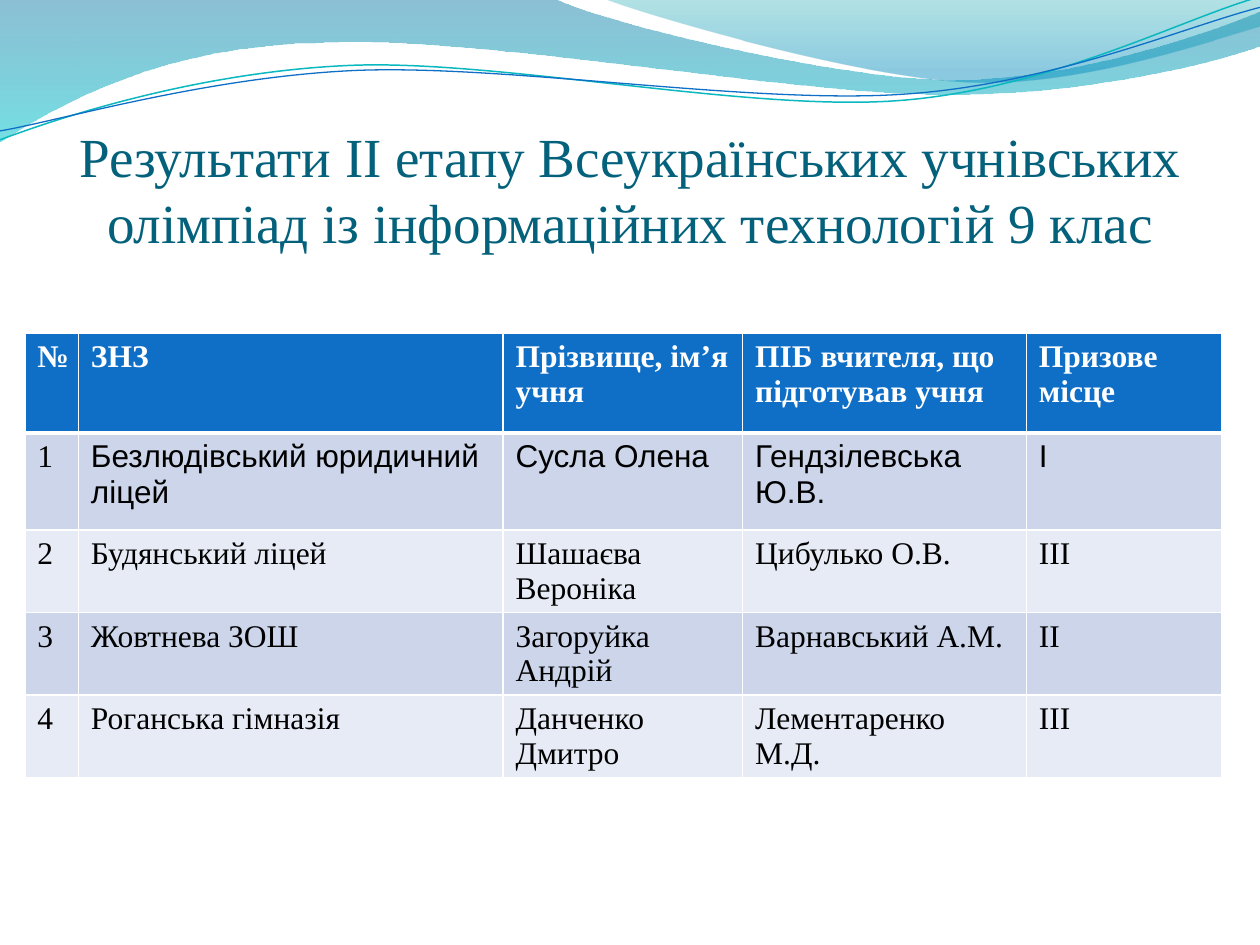
from dataclasses import dataclass

from lxml.etree import SubElement
from pptx import Presentation
from pptx.dml.color import RGBColor
from pptx.enum.text import MSO_ANCHOR, MSO_AUTO_SIZE, PP_ALIGN
from pptx.oxml import parse_xml
from pptx.oxml.ns import nsdecls, qn
from pptx.util import Cm, Pt


@dataclass(frozen=True)
class Theme:
    serif: str = "Times New Roman"
    sans: str = "Arial"
    title_size: float = 31.5
    table_size: float = 18
    title: str = "04617B"
    header: str = "0F6FC6"
    bands: tuple = ("CCD5EA", "E7EBF5")
    white: str = "FFFFFF"
    black: str = "000000"
    border: float = 1
    header_border: float = 3
    # Gradient stops: position, colour, opacity in percent
    band_wave: tuple = ((0, "0074A1", 45), (100, "00C6CF", 55))
    crest_wave: tuple = ((0, "00A1A9", 30), (80, "008BBF", 45))
    teal_line: tuple = ("0AB8BF", 0.85)
    blue_line: tuple = ("0F6FC6", 0.75)


@dataclass(frozen=True)
class Box:
    """A region of the slide in centimetres."""
    left: float
    top: float
    width: float
    height: float

    def lengths(self):
        return Cm(self.left), Cm(self.top), Cm(self.width), Cm(self.height)


THEME = Theme()
TITLE = "Результати ІІ етапу Всеукраїнських учнівських олімпіад із інформаційних технологій 9 клас"
HEADERS = ("№", "ЗНЗ", "Прізвище, ім’я учня", "ПІБ вчителя, що підготував учня", "Призове місце")
RESULTS = (
    ("1", "Безлюдівський юридичний ліцей", "Сусла Олена", "Гендзілевська Ю.В.", "І"),
    ("2", "Будянський ліцей", "Шашаєва Вероніка", "Цибулько О.В.", "ІІІ"),
    ("3", "Жовтнева ЗОШ", "Загоруйка Андрій", "Варнавський А.М.", "ІІ"),
    ("4", "Роганська гімназія", "Данченко Дмитро", "Лементаренко М.Д.", "ІІІ"),
)
COLUMN_WIDTHS = (1.08, 8.56, 4.83, 5.72, 3.94)
ROW_HEIGHTS = (2.01, 1.96, 1.07, 1.07, 1.07)

# Outlines in centimetres: two numbers are a straight step, six a Bézier curve.
BAND = (
    (0, -0.03), (11.18, -0.03),
    (12.09, 0.43, 16.87, 1.6, 19.25, 1.6), (21.67, 1.6, 24.33, 0.66, 25.4, 0.23),
    (25.43, 0.91), (24.97, 1.12, 22.1, 1.93, 18.95, 1.9),
    (15.8, 1.9, 9.7, 0.71, 6.53, 0.86), (3.28, 0.89, 1.17, 2.11, -0.03, 2.87),
)
CREST = (
    (12.17, -0.03), (12.93, 0.28, 17.32, 1.57, 19.53, 1.65),
    (21.74, 1.75, 24.41, 0.81, 25.4, 0.53), (25.4, 0),
)
TEAL_LINE = (
    (0, 2.82), (1.22, 2.36, 4.01, 1.45, 7.04, 1.32),
    (10.03, 1.19, 15.06, 2.26, 18.11, 2.03), (21.16, 1.8, 23.83, 0.38, 25.35, -0.05),
)
BLUE_LINE = (
    (0, 2.64), (1.19, 2.44, 4.17, 1.55, 7.19, 1.42),
    (10.24, 1.3, 15.16, 2.11, 18.21, 1.9), (21.23, 1.7, 23.9, 0.53, 25.4, 0.15),
)


def bend_segments(shape, outline):
    """Join each three steps that stand for a curve into one Bézier segment."""
    steps = iter(list(shape.element.spPr.iter(qn("a:lnTo"))))
    for segment in outline[1:]:
        first = next(steps)
        if len(segment) == 6:
            first.tag = qn("a:cubicBezTo")
            for step in (next(steps), next(steps)):
                first.append(step[0])
                step.getparent().remove(step)


def add_outline(slide, box, outline, close):
    points = [
        (Cm(segment[index]), Cm(segment[index + 1]))
        for segment in outline for index in range(0, len(segment), 2)
    ]
    builder = slide.shapes.build_freeform(*points[0])
    builder.add_line_segments(points[1:], close=close)
    shape = builder.convert_to_shape(Cm(box.left), Cm(box.top))
    bend_segments(shape, outline)
    shape.shadow.inherit = False
    return shape


def fill_with_gradient(shape, stops):
    shape.line.fill.background()
    shape.fill.gradient()
    shape.fill.gradient_angle = 270
    for stop, (position, colour, _) in zip(shape.fill.gradient_stops, stops):
        stop.position = position / 100
        stop.color.rgb = RGBColor.from_string(colour)
    colours = shape.element.spPr.findall(f"{qn('a:gradFill')}//{qn('a:srgbClr')}")
    for colour, (_, _, opacity) in zip(colours, stops):
        SubElement(colour, qn("a:alpha")).set("val", str(opacity * 1000))


def add_waves(slide, box):
    for outline, stops in ((BAND, THEME.band_wave), (CREST, THEME.crest_wave)):
        fill_with_gradient(add_outline(slide, box, outline, True), stops)
    for outline, (colour, width) in ((TEAL_LINE, THEME.teal_line), (BLUE_LINE, THEME.blue_line)):
        wave = add_outline(slide, box, outline, False)
        wave.fill.background()
        wave.line.color.rgb = RGBColor.from_string(colour)
        wave.line.width = Pt(width)


def format_text(paragraph, font_name, size, colour, bold=False):
    for run in paragraph.runs:
        run.font.name = font_name
        run.font.size = Pt(size)
        run.font.bold = bold
        run.font.color.rgb = RGBColor.from_string(colour)


def place_title(slide, box):
    title = slide.shapes.title
    title.left, title.top, title.width, title.height = box.lengths()
    frame = title.text_frame
    frame.text = TITLE
    frame.word_wrap = True
    frame.auto_size = MSO_AUTO_SIZE.NONE
    frame.vertical_anchor = MSO_ANCHOR.BOTTOM
    frame.margin_left = frame.margin_right = frame.margin_bottom = 0
    frame.margin_top = Cm(0.13)
    paragraph = frame.paragraphs[0]
    paragraph.alignment = PP_ALIGN.CENTER
    format_text(paragraph, THEME.serif, THEME.title_size, THEME.title)
    slide.shapes.element.append(title.element)  # in front of the waves


def set_borders(cell, top, bottom):
    properties = cell._tc.get_or_add_tcPr()
    widths = {"lnL": THEME.border, "lnR": THEME.border, "lnT": top, "lnB": bottom}
    for index, (side, width) in enumerate(widths.items()):
        properties.insert(index, parse_xml(
            f'<a:{side} {nsdecls("a")} w="{Pt(width)}"><a:solidFill>'
            f'<a:srgbClr val="{THEME.white}"/></a:solidFill></a:{side}>'
        ))


def add_results_table(slide, box):
    rows = (HEADERS, *RESULTS)
    table = slide.shapes.add_table(len(rows), len(HEADERS), *box.lengths()).table
    for column, width in zip(table.columns, COLUMN_WIDTHS):
        column.width = Cm(width)
    for row, height in zip(table.rows, ROW_HEIGHTS):
        row.height = Cm(height)
    for row_index, texts in enumerate(rows):
        is_header = row_index == 0
        fill = THEME.header if is_header else THEME.bands[(row_index - 1) % 2]
        colour = THEME.white if is_header else THEME.black
        top = THEME.header_border if row_index == 1 else THEME.border
        bottom = THEME.header_border if is_header else THEME.border
        for column_index, text in enumerate(texts):
            cell = table.cell(row_index, column_index)
            cell.text = text
            cell.fill.solid()
            cell.fill.fore_color.rgb = RGBColor.from_string(fill)
            set_borders(cell, top, bottom)
            font_name = THEME.sans if row_index == 1 and column_index > 0 else THEME.serif
            format_text(cell.text_frame.paragraphs[0], font_name, THEME.table_size, colour, is_header)


def main():
    presentation = Presentation()
    presentation.slide_width, presentation.slide_height = Cm(25.4), Cm(19.05)
    slide = presentation.slides.add_slide(presentation.slide_layouts.get_by_name("Title Only"))
    add_waves(slide, Box(0, 0, 25.4, 2.87))
    place_title(slide, Box(1.27, 1.96, 22.86, 3.18))
    add_results_table(slide, Box(0.5, 6.72, sum(COLUMN_WIDTHS), sum(ROW_HEIGHTS)))
    presentation.save("out.pptx")


if __name__ == "__main__":
    main()
